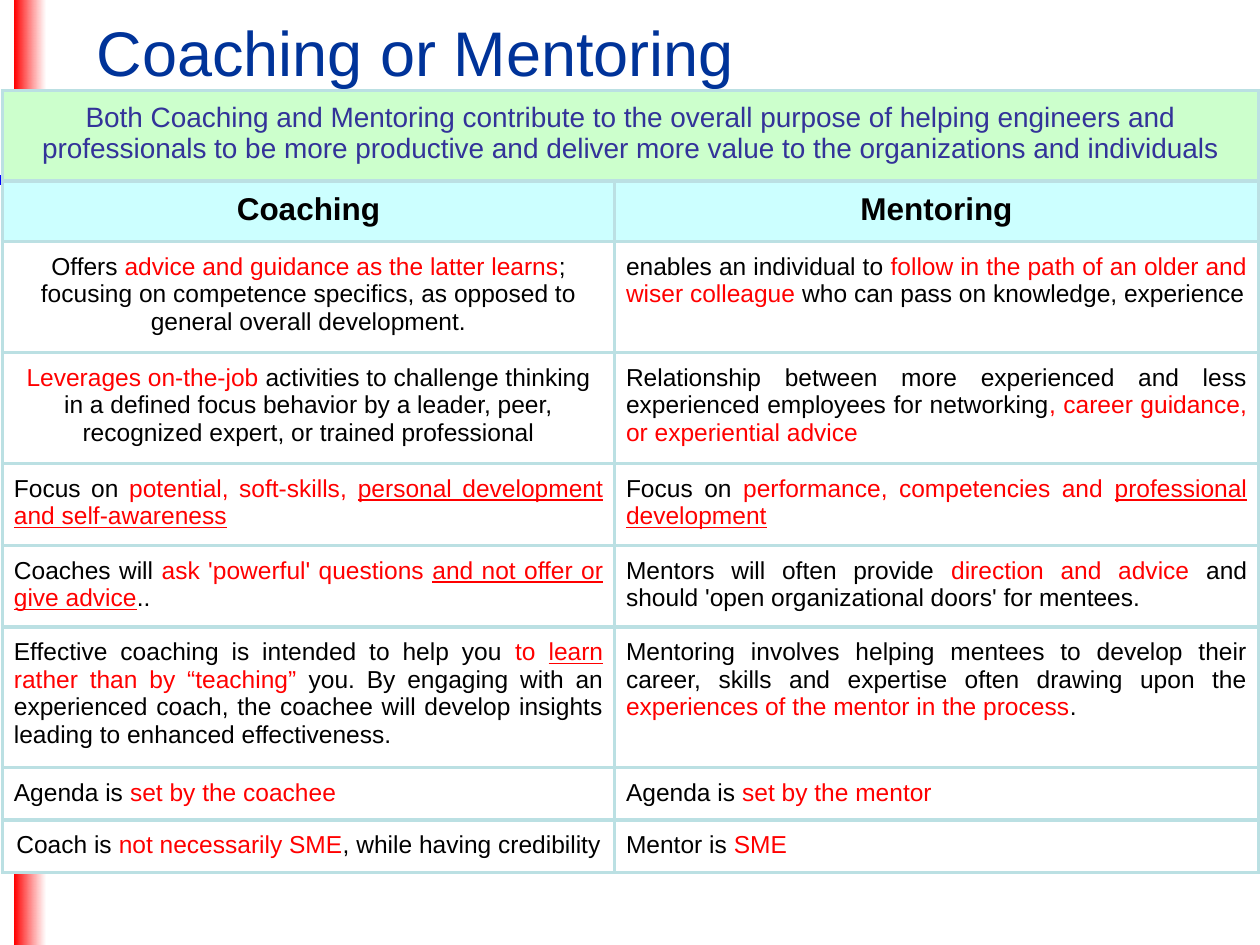
from collections import namedtuple
from dataclasses import dataclass

from lxml.etree import SubElement
from pptx import Presentation
from pptx.dml.color import RGBColor as Rgb
from pptx.enum.shapes import MSO_SHAPE as Shape
from pptx.enum.text import MSO_ANCHOR as Anchor, PP_ALIGN as Align
from pptx.oxml.ns import qn
from pptx.util import Cm, Pt

Box = namedtuple("Box", "left top width height")


@dataclass(frozen=True)
class Theme:
    font: str = "Arial"
    title: str = "003399"
    purpose: str = "333399"
    body: str = "000000"
    accent: str = "FF0000"
    rule: str = "0000FF"
    paper: str = "FFFFFF"
    purpose_fill: str = "CCFFCC"
    heading_fill: str = "CCFFFF"
    border: str = "BBE0E3"
    title_size: int = 36
    purpose_size: int = 16
    heading_size: int = 18
    body_size: int = 14
    border_width: float = 2.25


THEME = Theme()
STYLES = {
    "title": dict(size=THEME.title_size, color=THEME.title),
    "purpose": dict(size=THEME.purpose_size, color=THEME.purpose),
    "heading": dict(size=THEME.heading_size, color=THEME.body, bold=True),
    "plain": dict(size=THEME.body_size, color=THEME.body),
    "red": dict(size=THEME.body_size, color=THEME.accent),
    "under": dict(size=THEME.body_size, color=THEME.accent, underline=True),
}

COLUMN_WIDTHS = (12.34, 12.98)
HEADER_HEIGHTS = (1.07, 0.86)
PURPOSE = ("Both Coaching and Mentoring contribute to the overall purpose of "
           "helping engineers and professionals to be more productive and "
           "deliver more value to the organizations and individuals")
HEADINGS = ("Coaching", "Mentoring")

# Each row: height, coaching alignment, coaching runs, mentoring runs
COMPARISONS = [
    (2.01, Align.CENTER,
     [("plain", "Offers "), ("red", "advice and guidance as the latter learns"),
      ("plain", "; focusing on competence specifics, as opposed to general "
                "overall development.")],
     [("plain", "enables an individual to "),
      ("red", "follow in the path of an older and wiser colleague"),
      ("plain", " who can pass on knowledge, experience")]),
    (2.01, Align.CENTER,
     [("red", "Leverages on-the-job"),
      ("plain", " activities to challenge thinking in a defined focus behavior "
                "by a leader, peer, recognized expert, or trained professional")],
     [("plain", "Relationship between more experienced and less experienced "
                "employees for networking"),
      ("red", ", career guidance, or experiential advice")]),
    (1.35, Align.JUSTIFY,
     [("plain", "Focus on "), ("red", "potential, soft-skills, "),
      ("under", "personal development and self-awareness")],
     [("plain", "Focus on "), ("red", "performance, competencies and "),
      ("under", "professional development")]),
    (1.5, Align.JUSTIFY,
     [("plain", "Coaches will "), ("red", "ask 'powerful' questions "),
      ("under", "and not offer or give advice"), ("plain", "..")],
     [("plain", "Mentors will often provide "), ("red", "direction and advice"),
      ("plain", " and should 'open organizational doors' for mentees.")]),
    (2.64, Align.JUSTIFY,
     [("plain", "Effective coaching is intended to help you "), ("red", "to "),
      ("under", "learn"), ("red", " rather than by “teaching” "),
      ("plain", "you. By engaging with an experienced coach, the coachee will "
                "develop insights leading to enhanced effectiveness.")],
     [("plain", "Mentoring involves helping mentees to develop their career, "
                "skills and expertise often drawing upon the "),
      ("red", "experiences of the mentor in the process"), ("plain", ".")]),
    (0.58, Align.JUSTIFY,
     [("plain", "Agenda is "), ("red", "set by the coachee")],
     [("plain", "Agenda is "), ("red", "set by the mentor")]),
    (0.84, Align.CENTER,
     [("plain", "Coach is "), ("red", "not necessarily SME"),
      ("plain", ", while having credibility")],
     [("plain", "Mentor is "), ("red", "SME")]),
]


def in_cm(box):
    return [Cm(length) for length in box]


def write_runs(paragraph, runs, align):
    paragraph.alignment = align
    for style, words in runs:
        run = paragraph.add_run()
        run.text = words
        look = dict(STYLES[style], name=THEME.font)
        run.font.color.rgb = Rgb.from_string(look.pop("color"))
        look["size"] = Pt(look["size"])
        for key, value in look.items():
            setattr(run.font, key, value)


def add_fading_bar(slide, box, color, end_alpha=100):
    bar = slide.shapes.add_shape(Shape.RECTANGLE, *in_cm(box))
    bar.shadow.inherit = False
    bar.line.fill.background()
    bar.fill.gradient()
    bar.fill.gradient_angle = 0
    for stop, tone in zip(bar.fill.gradient_stops, (color, THEME.paper)):
        stop.color.rgb = Rgb.from_string(tone)
    if end_alpha < 100:
        end_color = bar.element.xpath(".//a:gs/a:srgbClr")[-1]
        SubElement(end_color, qn("a:alpha"), val=str(end_alpha * 1000))


def add_title(slide, box):
    frame = slide.shapes.add_textbox(*in_cm(box)).text_frame
    frame.word_wrap = True
    frame.vertical_anchor = Anchor.MIDDLE
    write_runs(frame.paragraphs[0], [("title", "Coaching or Mentoring")], Align.LEFT)


def draw_borders(cell):
    properties = cell._tc.get_or_add_tcPr()
    for side in "LRTB":
        line = SubElement(properties, qn(f"a:ln{side}"),
                          w=str(Pt(THEME.border_width)))
        fill = SubElement(line, qn("a:solidFill"))
        SubElement(fill, qn("a:srgbClr"), val=THEME.border)


def fill_cell(cell, runs, align, color):
    margins = ("margin_left", "margin_right", "margin_top", "margin_bottom")
    for margin in margins:
        setattr(cell, margin, Cm(0.23))
    draw_borders(cell)
    cell.fill.solid()
    cell.fill.fore_color.rgb = Rgb.from_string(color)
    write_runs(cell.text_frame.paragraphs[0], runs, align)


def add_comparison(slide, box):
    heights = [*HEADER_HEIGHTS, *(row[0] for row in COMPARISONS)]
    frame = slide.shapes.add_table(len(heights), len(COLUMN_WIDTHS), *in_cm(box))
    table = frame.table
    for column, width in zip(table.columns, COLUMN_WIDTHS):
        column.width = Cm(width)
    for row, height in zip(table.rows, heights):
        row.height = Cm(height)
    frame.height = Cm(box.height)

    # Shared purpose across both columns
    table.cell(0, 0).merge(table.cell(0, 1))
    fill_cell(table.cell(0, 0), [("purpose", PURPOSE)], Align.CENTER,
              THEME.purpose_fill)
    draw_borders(table.cell(0, 1))

    # Column headings
    for column, heading in enumerate(HEADINGS):
        fill_cell(table.cell(1, column), [("heading", heading)], Align.CENTER,
                  THEME.heading_fill)

    # Point-by-point comparison
    for row, (_, align, coaching, mentoring) in enumerate(COMPARISONS, 2):
        fill_cell(table.cell(row, 0), coaching, align, THEME.paper)
        fill_cell(table.cell(row, 1), mentoring, Align.JUSTIFY, THEME.paper)


def main():
    deck = Presentation()
    deck.slide_width, deck.slide_height = Cm(25.4), Cm(19.05)
    slide = deck.slides.add_slide(deck.slide_layouts[6])
    add_fading_bar(slide, Box(0.3, 0, 0.61, 19.05), THEME.accent, end_alpha=84)
    add_fading_bar(slide, Box(0, 3.53, 23.9, 0.2), THEME.rule)
    add_title(slide, Box(1.7, 0.33, 21.13, 1.4))
    add_comparison(slide, Box(0.05, 1.83, sum(COLUMN_WIDTHS), 15.88))
    deck.save("out.pptx")


if __name__ == "__main__":
    main()
